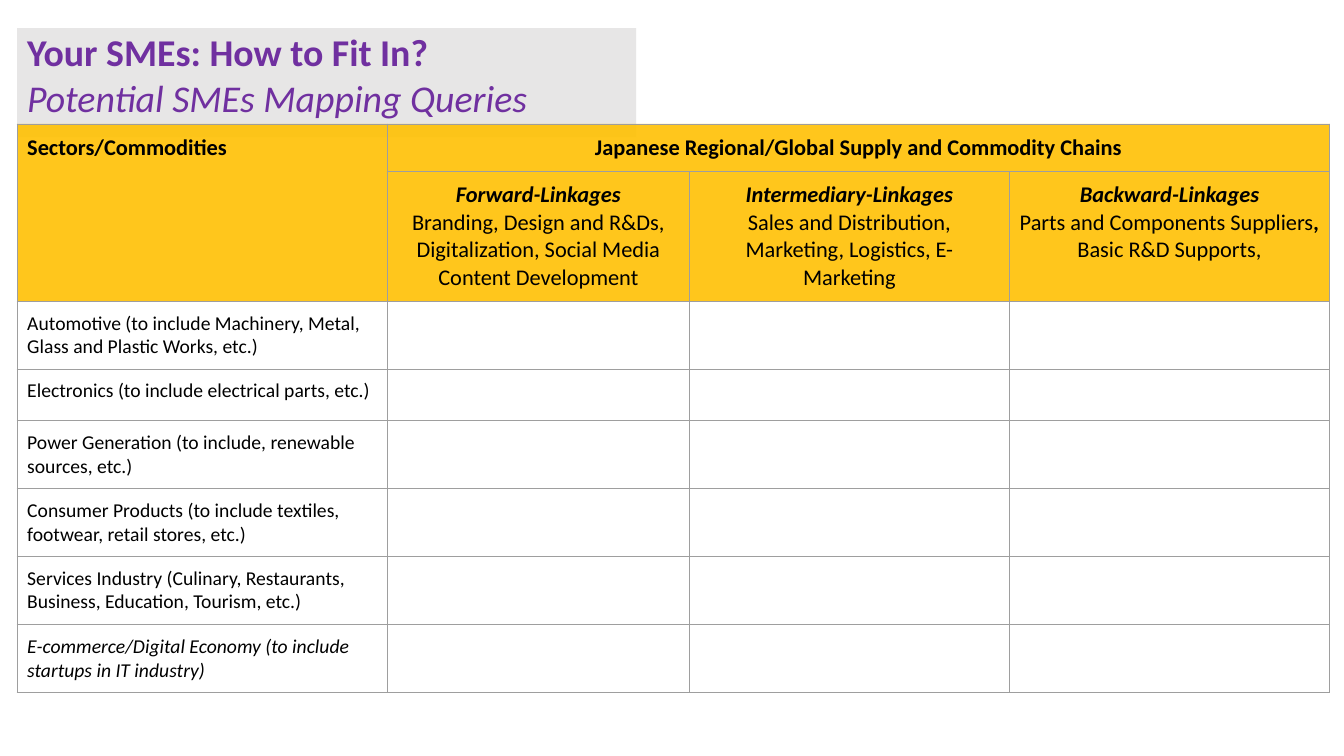
"""Build the SME mapping slide: a title band above a sector and supply chain table."""
import lxml.etree
import pptx
import pptx.dml.color
import pptx.enum.shapes
import pptx.enum.text
import pptx.oxml
import pptx.oxml.ns
import pptx.util

PX = 9144
THEME = {
    "font": "Calibri",
    "title": "7030A0", "title_size": 27, "band": "E7E6E6",
    "text": "000000", "header_size": 16, "sector_size": 14,
    "header": "FFC000", "header_alpha": 89000,
    "border": "9E9E9E", "border_width": 0.75,
}
ALIGN = pptx.enum.text.PP_ALIGN
COLUMNS = [367, 300, 317, 318]
ROWS = [45, 123, 65, 51, 65, 65, 68, 65]
LINKAGES = [
    ("Forward-Linkages",
     [("Branding, Design and R&Ds, Digitalization, Social Media Content Development", "")]),
    ("Intermediary-Linkages",
     [("Sales and Distribution, Marketing, Logistics, E-Marketing", "")]),
    ("Backward-Linkages",
     [("Parts and Components Suppliers", ""), (", ", "bi"), ("Basic R&D Supports,", "")]),
]
SECTORS = [
    ("Automotive (to include Machinery, Metal, Glass and Plastic Works, etc.)", ""),
    ("Electronics (to include electrical parts, etc.)", ""),
    ("Power Generation (to include, renewable sources, etc.)", ""),
    ("Consumer Products (to include textiles, footwear, retail stores, etc.)", ""),
    ("Services Industry (Culinary, Restaurants, Business, Education, Tourism, etc.)", ""),
    ("E-commerce/Digital Economy (to include startups in IT industry)", "i"),
]


def write(frame, lines, size, color, align=ALIGN.LEFT):
    """Fill a text frame with paragraphs of (text, style) spans; b is bold, i is italic."""
    for index, spans in enumerate(lines):
        para = frame.add_paragraph() if index else frame.paragraphs[0]
        para.alignment = align
        for text, style in spans:
            span = para.add_run()
            span.text = text
            span.font.name = THEME["font"]
            span.font.size = pptx.util.Pt(size)
            span.font.bold = "b" in style
            span.font.italic = "i" in style
            span.font.color.rgb = pptx.dml.color.RGBColor.from_string(color)


deck = pptx.Presentation()
deck.slide_width, deck.slide_height = 1333 * PX, 750 * PX
page = deck.slides.add_slide(deck.slide_layouts[6])

band = page.shapes.add_shape(
    pptx.enum.shapes.MSO_SHAPE.RECTANGLE, 17 * PX, 28 * PX, 614 * PX, 108 * PX)
band.shadow.inherit = False
band.fill.solid()
band.fill.fore_color.rgb = pptx.dml.color.RGBColor.from_string(THEME["band"])
band.line.fill.background()
band.text_frame.word_wrap = True
band.text_frame.vertical_anchor = pptx.enum.text.MSO_ANCHOR.MIDDLE
write(band.text_frame,
      [[("Your SMEs: How to Fit In?", "b")], [("Potential SMEs Mapping Queries", "i")]],
      THEME["title_size"], THEME["title"])
for para in band.text_frame.paragraphs:
    para.line_spacing = 0.5
band.text_frame.paragraphs[1].space_before = pptx.util.Pt(16.5)

table = page.shapes.add_table(
    len(ROWS), len(COLUMNS), 17 * PX, 123 * PX, sum(COLUMNS) * PX, sum(ROWS) * PX).table
table.first_row = table.horz_banding = False
for column, width in zip(table.columns, COLUMNS):
    column.width = width * PX
for row, height in zip(table.rows, ROWS):
    row.height = height * PX

for row_index, row in enumerate(table.rows):
    for cell in row.cells:
        cell.margin_left = cell.margin_right = 10 * PX
        cell.margin_top = cell.margin_bottom = 10 * PX
        properties = cell._tc.get_or_add_tcPr()
        for side in ("lnL", "lnR", "lnT", "lnB"):
            properties.append(pptx.oxml.parse_xml(
                f'<a:{side} {pptx.oxml.ns.nsdecls("a")} '
                f'w="{pptx.util.Pt(THEME["border_width"])}"><a:solidFill>'
                f'<a:srgbClr val="{THEME["border"]}"/></a:solidFill></a:{side}>'))
        if row_index < 2:
            cell.fill.solid()
            cell.fill.fore_color.rgb = pptx.dml.color.RGBColor.from_string(THEME["header"])
            tint = properties.find(
                pptx.oxml.ns.qn("a:solidFill") + "/" + pptx.oxml.ns.qn("a:srgbClr"))
            lxml.etree.SubElement(
                tint, pptx.oxml.ns.qn("a:alpha"), val=str(THEME["header_alpha"]))
        else:
            cell.fill.background()

table.cell(0, 0).merge(table.cell(1, 0))
table.cell(0, 1).merge(table.cell(0, 3))
write(table.cell(0, 0).text_frame, [[("Sectors/Commodities", "b")]],
      THEME["header_size"], THEME["text"])
write(table.cell(0, 1).text_frame,
      [[("Japanese Regional/Global Supply and Commodity Chains", "b")]],
      THEME["header_size"], THEME["text"], ALIGN.CENTER)
for column_index, (name, activities) in enumerate(LINKAGES, start=1):
    write(table.cell(1, column_index).text_frame, [[(name, "bi")], activities],
          THEME["header_size"], THEME["text"], ALIGN.CENTER)
for row_index, sector in enumerate(SECTORS, start=2):
    write(table.cell(row_index, 0).text_frame, [[sector]],
          THEME["sector_size"], THEME["text"])

deck.save("out.pptx")
